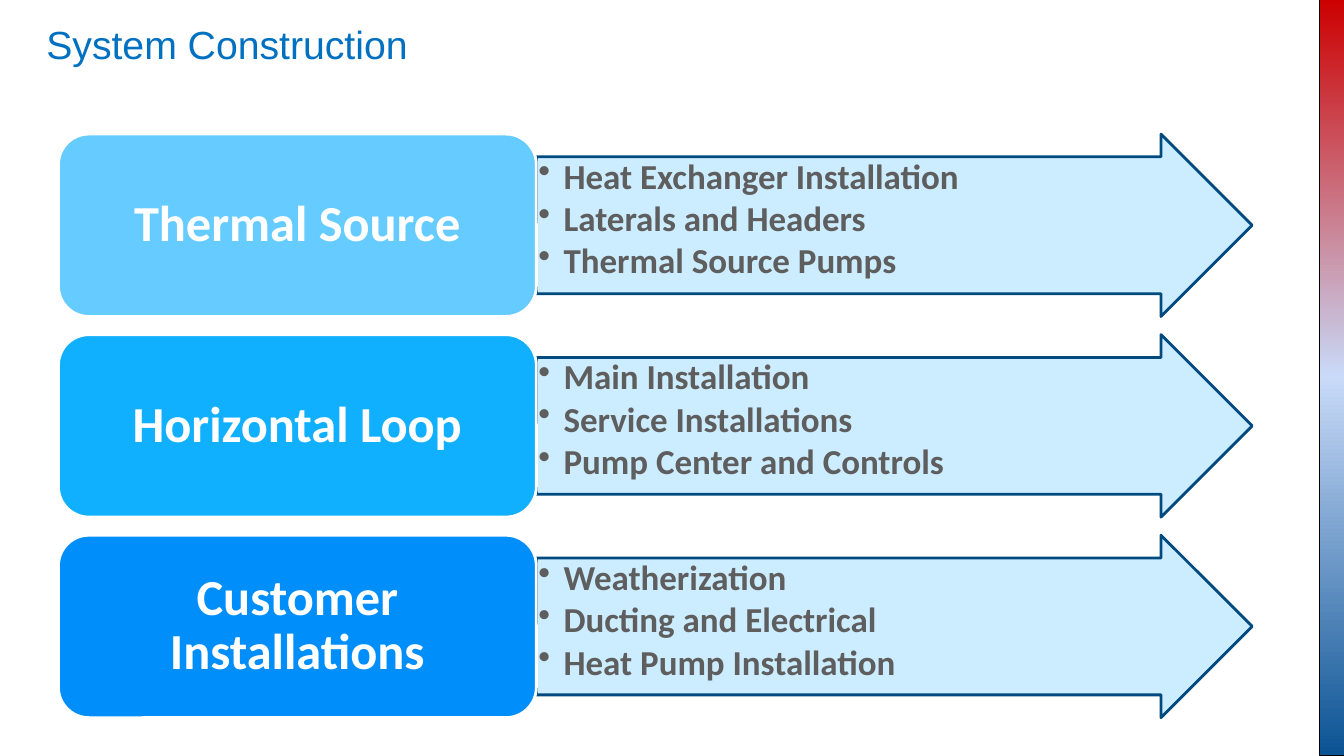
from copy import deepcopy

from lxml import etree
from pptx import Presentation
from pptx.dml.color import RGBColor
from pptx.enum import shapes, text
from pptx.oxml import ns
from pptx.util import Inches, Pt

STAGES = [
    ("Thermal Source", "66CCFF",
     ["Heat Exchanger Installation", "Laterals and Headers", "Thermal Source Pumps"]),
    ("Horizontal Loop", "11B0FF",
     ["Main Installation", "Service Installations", "Pump Center and Controls"]),
    ("Customer Installations", "008FFA",
     ["Weatherization", "Ducting and Electrical", "Heat Pump Installation"]),
]
FIRST_TOP, ROW_PITCH, ROW_HEIGHT = 1.33, 1.99, 1.81
CARD_LEFT, CARD_WIDTH, ARROW_WIDTH = 0.58, 4.74, 7.1


def color(value):
    return RGBColor.from_string(value)


def add_span(para, words, size, font, value, bold=False):
    span = para.add_run()
    span.text = words
    span.font.size = Pt(size)
    span.font.name = font
    span.font.bold = bold
    span.font.color.rgb = color(value)


def add_box(page, kind, left, top, width, height, line, weight, fill=None):
    box = page.shapes.add_shape(
        kind, Inches(left), Inches(top), Inches(width), Inches(height))
    box.shadow.inherit = False
    box.line.color.rgb = color(line)
    box.line.width = Pt(weight)
    if fill:
        box.fill.solid()
        box.fill.fore_color.rgb = color(fill)
    return box


def prepare_frame(box, anchor, side, end):
    frame = box.text_frame
    frame.word_wrap = True
    frame.vertical_anchor = anchor
    frame.margin_left = frame.margin_right = Inches(side)
    frame.margin_top = frame.margin_bottom = Inches(end)
    return frame


def add_bullet(para):
    properties = para._p.get_or_add_pPr()
    properties.set("marL", str(Inches(0.25)))
    properties.set("indent", str(-Inches(0.25)))
    etree.SubElement(properties, ns.qn("a:buChar")).set("char", "•")


def add_title(page, words):
    title = page.shapes.title
    title.left, title.top = Inches(0.36), Inches(0.15)
    title.width, title.height = Inches(6.99), Inches(0.97)
    frame = title.text_frame
    frame.auto_size = text.MSO_AUTO_SIZE.NONE
    frame.vertical_anchor = text.MSO_ANCHOR.TOP
    para = frame.paragraphs[0]
    para.alignment = text.PP_ALIGN.LEFT
    add_span(para, words, 28, "Arial", "0070C0")


def add_side_bar(page):
    bar = add_box(page, shapes.MSO_SHAPE.RECTANGLE, 9.46, 3.62, 7.5, 0.25, "000000", 0.75)
    bar.rotation = 90
    bar.fill.gradient()
    bar.fill.gradient_angle = 0
    first, last = bar.fill.gradient_stops
    first.color.rgb, first.position = color("CC0000"), 0
    last.color.rgb, last.position = color("0B5394"), 1
    start = bar._element.spPr.find(".//" + ns.qn("a:gs"))
    middle = deepcopy(start)
    start.addnext(middle)
    stop = bar.fill.gradient_stops[1]
    stop.color.rgb, stop.position = color("C9DAF8"), 0.5


def add_arrow(page, top, items):
    arrow = add_box(page, shapes.MSO_SHAPE.RIGHT_ARROW, CARD_LEFT + CARD_WIDTH, top,
                    ARROW_WIDTH, ROW_HEIGHT, "004A7F", 2, "CCECFF")
    arrow.adjustments[0] = 0.75
    arrow.adjustments[1] = 0.5
    frame = prepare_frame(arrow, text.MSO_ANCHOR.TOP, 0.02, 0.02)
    for index, item in enumerate(items):
        para = frame.add_paragraph() if index else frame.paragraphs[0]
        add_bullet(para)
        para.level = 1
        para.alignment = text.PP_ALIGN.LEFT
        para.line_spacing = 0.9
        para.space_after = Pt(3.3)
        add_span(para, item, 25, "Calibri", "5E5E5E", bold=True)


def add_card(page, top, name, fill):
    card = add_box(page, shapes.MSO_SHAPE.ROUNDED_RECTANGLE, CARD_LEFT, top,
                   CARD_WIDTH, ROW_HEIGHT, "FFFFFF", 2, fill)
    frame = prepare_frame(card, text.MSO_ANCHOR.MIDDLE, 0.15, 0.07)
    para = frame.paragraphs[0]
    para.alignment = text.PP_ALIGN.CENTER
    para.line_spacing = 0.9
    add_span(para, name, 36, "Calibri", "FFFFFF", bold=True)


def main():
    deck = Presentation()
    deck.slide_width, deck.slide_height = Inches(13.33), Inches(7.5)
    page = deck.slides.add_slide(deck.slide_layouts.get_by_name("Title Only"))
    add_title(page, "System Construction")
    add_side_bar(page)
    for row, (name, fill, items) in enumerate(STAGES):
        top = FIRST_TOP + row * ROW_PITCH
        add_arrow(page, top, items)
        add_card(page, top, name, fill)
    deck.save("out.pptx")


if __name__ == "__main__":
    main()
